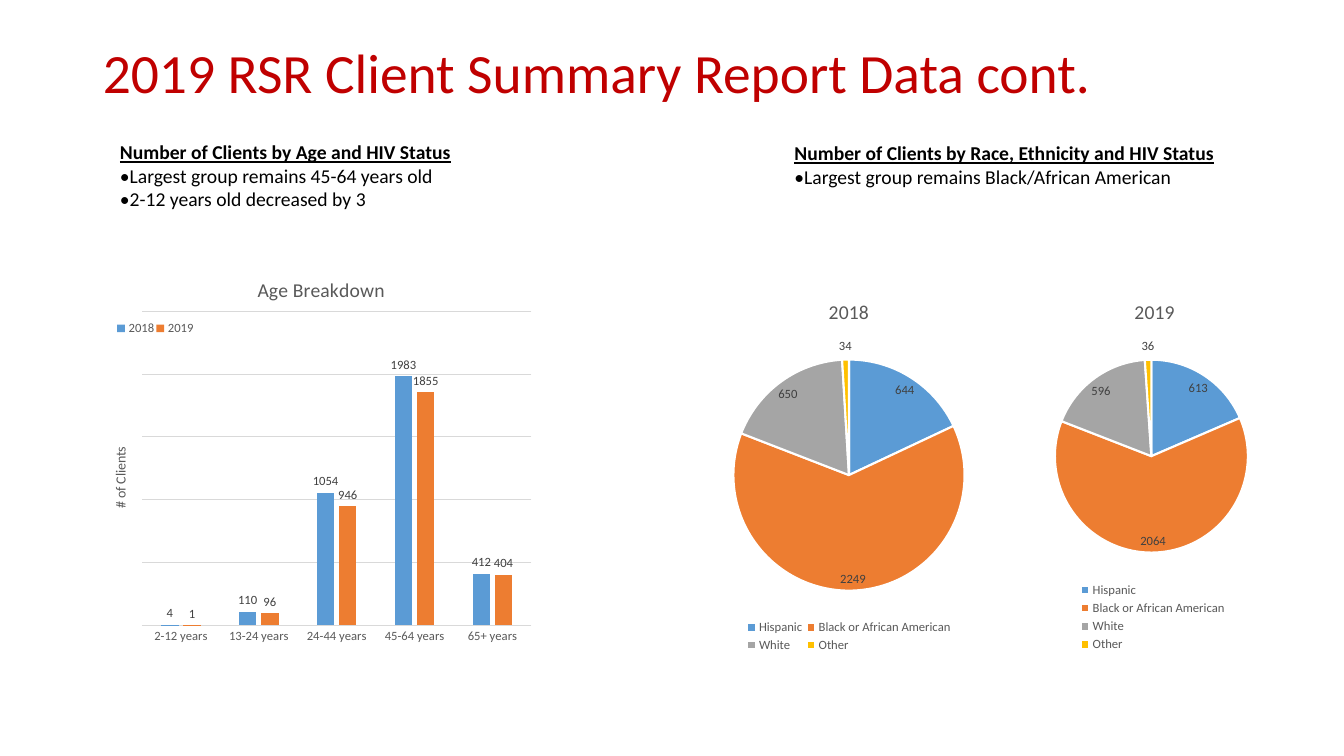
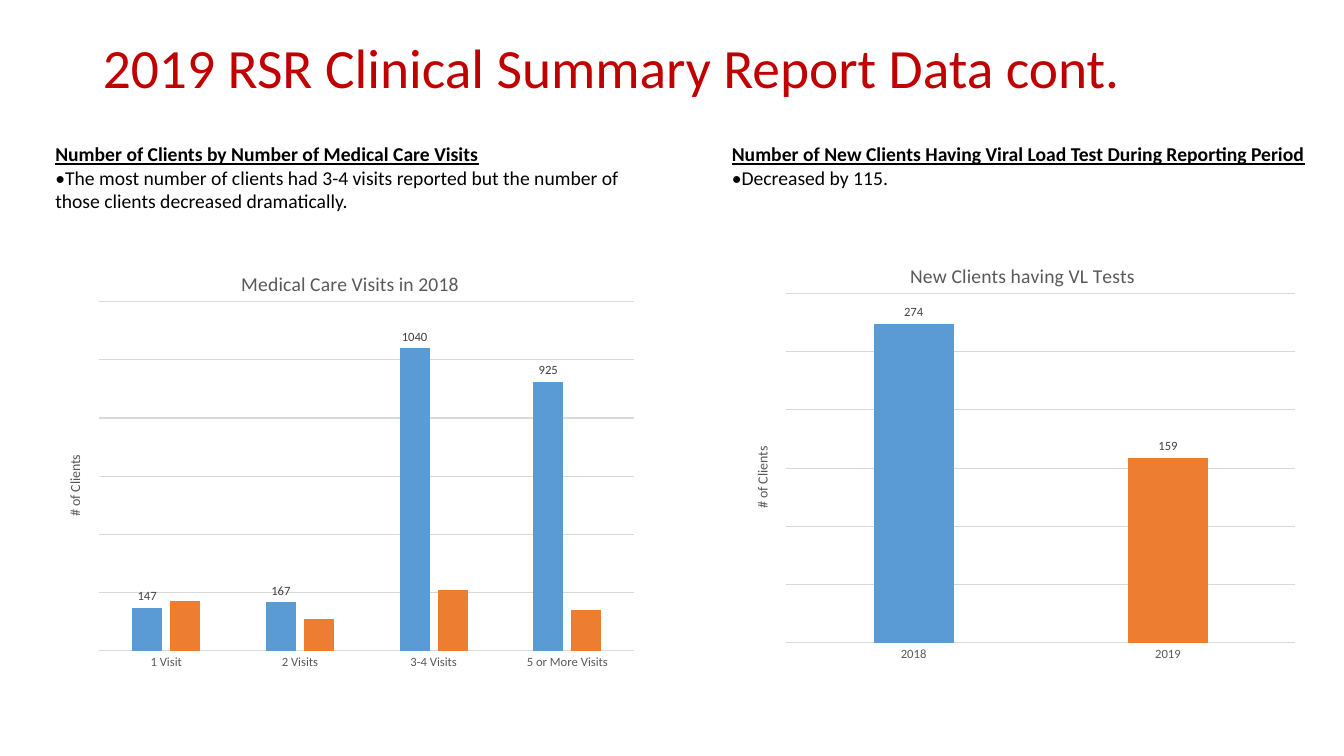
from lxml import etree
from pptx import Presentation
from pptx import util as u
from pptx.chart.data import CategoryChartData
from pptx.dml.color import RGBColor
from pptx.enum import chart as ch, text
from pptx.oxml.ns import qn

RED, BLACK, GRAY, DARK, RULE, WHITE = "C00000", "000000", "595959", "404040", "D9D9D9", "FFFFFF"
PALETTE = ["5B9BD5", "ED7D31", "A5A5A5", "FFC000"]
FONT = "Calibri"
COLUMN, PIE = ch.XL_CHART_TYPE.COLUMN_CLUSTERED, ch.XL_CHART_TYPE.PIE
RACES = ["Hispanic", "Black or African American", "White", "Other"]


def paint(target, color, **values):
    """Colour a font, line or chart format and set its other attributes."""
    target.fill.solid()
    target.fill.fore_color.rgb = RGBColor.from_string(color)
    for name, value in values.items():
        setattr(target, name, value)


def place(parent, box):
    """Fix a chart part at x, y (and width, height) as fractions of the chart."""
    for old in parent.findall(qn("c:layout")):
        parent.remove(old)
    layout = etree.Element(qn("c:layout"))
    manual = etree.SubElement(layout, qn("c:manualLayout"))
    if parent.tag == qn("c:plotArea"):
        etree.SubElement(manual, qn("c:layoutTarget")).set("val", "inner")
    for name in ("xMode", "yMode"):
        etree.SubElement(manual, qn("c:" + name)).set("val", "edge")
    for name, value in zip("xywh", box):
        etree.SubElement(manual, qn("c:" + name)).set("val", str(value))
    overlay = parent.find(qn("c:overlay"))
    if overlay is None:
        parent.insert(0, layout)
    else:
        overlay.addprevious(layout)


# Slide content: text boxes and charts with their fractional layouts
slides = [
    {
        "title": "2019 RSR Client Summary Report Data cont.", "title_height": 0.7,
        "notes": [
            {"at": (1.09, 1.34, 4.61, 0.81), "wrap": True, "lines": [
                "Number of Clients by Age and HIV Status",
                "•Largest group remains 45-64 years old",
                "•2-12 years old decreased by 3"]},
            {"at": (7.78, 1.35, 4.39, 0.57), "wrap": False, "lines": [
                "Number of Clients by Race, Ethnicity and HIV Status",
                "•Largest group remains Black/African American"]},
        ],
        "charts": [
            {"at": (0.92, 2.49, 4.44, 4.27), "kind": COLUMN, "title": "Age Breakdown",
             "categories": ["2-12 years", "13-24 years", "24-44 years", "45-64 years", "65+ years"],
             "series": {"2018": [4, 110, 1054, 1983, 412], "2019": [1, 96, 946, 1855, 404]},
             "scale": (2500, 500), "title_at": (0.36, 0.05),
             "plot_at": (0.11, 0.14, 0.87, 0.73), "legend_at": (0.05, 0.16, 0.18, 0.04)},
            {"at": (9.97, 2.74, 2.9, 3.76), "kind": PIE, "title": "2019",
             "categories": RACES, "series": {"2019": [613, 2064, 596, 36]},
             "title_at": (0.43, 0.05), "plot_at": (0.17, 0.22, 0.66, 0.51),
             "legend_at": (0.25, 0.8, 0.51, 0.2)},
            {"at": (6.83, 2.74, 3.15, 3.76), "kind": PIE, "title": "2018",
             "categories": RACES, "series": {"Series 1": [644, 2249, 650, 34]},
             "title_at": (0.43, 0.05), "plot_at": (0.14, 0.22, 0.73, 0.61),
             "legend_at": (0.17, 0.9, 0.67, 0.1)},
        ],
    },
    {
        "title": "2019 RSR Clinical Summary Report Data cont.", "title_height": 0.59,
        "notes": [
            {"at": (0.45, 1.36, 6.14, 0.81), "wrap": True, "lines": [
                "Number of Clients by Number of Medical Care Visits",
                "•The most number of clients had 3-4 visits reported but the number of "
                "those clients decreased dramatically."]},
            {"at": (7.16, 1.36, 5.92, 0.57), "wrap": False, "lines": [
                "Number of New Clients Having Viral Load Test During Reporting Period",
                "•Decreased by 115."]},
        ],
        "charts": [
            {"at": (0.45, 2.43, 5.96, 4.33), "kind": COLUMN, "title": "Medical Care Visits in 2018",
             "categories": ["1 Visit", "2 Visits", "3-4 Visits", "5 or More Visits"],
             "series": {"Series 1": [147, 167, 1040, 925], "Series 2": [170, 110, 210, 140]},
             "unlabelled": ["Series 2"], "scale": (1200, 200),
             "title_at": (0.32, 0.05), "plot_at": (0.09, 0.13, 0.89, 0.8)},
            {"at": (7.29, 2.35, 5.67, 4.33), "kind": COLUMN, "title": "New Clients having VL Tests",
             "categories": ["2018", "2019"], "series": {"Series 1": [274, 159]},
             "scale": (300, 50), "title_at": (0.3, 0.05),
             "plot_at": (0.09, 0.13, 0.89, 0.8)},
        ],
    },
]

presentation = Presentation()
presentation.slide_width, presentation.slide_height = u.Inches(13.33), u.Inches(7.5)

for content in slides:
    slide = presentation.slides.add_slide(presentation.slide_layouts[5])

    # Title
    title = slide.shapes.title
    title.left, title.top = u.Inches(0.92), u.Inches(0.4)
    title.width, title.height = u.Inches(11.5), u.Inches(content["title_height"])
    title.text_frame.text = content["title"]
    title.text_frame.auto_size = text.MSO_AUTO_SIZE.NONE
    title.text_frame.vertical_anchor = text.MSO_ANCHOR.MIDDLE
    paragraph = title.text_frame.paragraphs[0]
    paragraph.alignment, paragraph.line_spacing = text.PP_ALIGN.LEFT, 0.9
    paint(paragraph.runs[0].font, RED, size=u.Pt(39.6), name=FONT)

    # Underlined headings with their findings
    for note in content["notes"]:
        shape = slide.shapes.add_textbox(*map(u.Inches, note["at"]))
        frame = shape.text_frame
        frame.text = "\n".join(note["lines"])
        frame.word_wrap = note["wrap"]
        frame.auto_size = text.MSO_AUTO_SIZE.SHAPE_TO_FIT_TEXT
        for index, paragraph in enumerate(frame.paragraphs):
            heading = index == 0
            paint(paragraph.runs[0].font, BLACK, size=u.Pt(14), name=FONT,
                  bold=heading, underline=heading)

    # Charts
    for item in content["charts"]:
        data = CategoryChartData()
        data.categories = item["categories"]
        for name, values in item["series"].items():
            data.add_series(name, values)
        chart = slide.shapes.add_chart(item["kind"], *map(u.Inches, item["at"]), data).chart
        is_pie = item["kind"] == PIE
        paint(chart.font, BLACK, size=u.Pt(10), name=FONT)

        chart.has_title = True
        chart.chart_title.text_frame.text = item["title"]
        paint(chart.chart_title.text_frame.paragraphs[0].runs[0].font, GRAY,
              size=u.Pt(14), name=FONT, bold=False)
        place(chart.element.find(".//" + qn("c:title")), item["title_at"])
        place(chart.element.find(".//" + qn("c:plotArea")), item["plot_at"])

        chart.has_legend = "legend_at" in item
        if chart.has_legend:
            chart.legend.position = ch.XL_LEGEND_POSITION.BOTTOM
            chart.legend.include_in_layout = False
            paint(chart.legend.font, GRAY, size=u.Pt(9), name=FONT)
            place(chart.element.find(".//" + qn("c:legend")), item["legend_at"])

        # Series colours and value labels
        plot = chart.plots[0]
        plot.vary_by_categories = is_pie
        for series, color in zip(plot.series, PALETTE):
            paint(series.format, color)
            if len(plot.series) == 1:
                for index, point_color in enumerate(PALETTE[:len(item["categories"])]):
                    point = series.points[index]
                    paint(point.format, point_color)
                    if is_pie:
                        paint(point.format.line, WHITE, width=u.Pt(1.5))
            if series.name not in item.get("unlabelled", []):
                labels = series.data_labels
                labels.show_value = True
                labels.position = (ch.XL_LABEL_POSITION.BEST_FIT if is_pie
                                   else ch.XL_LABEL_POSITION.OUTSIDE_END)
                paint(labels.font, DARK, size=u.Pt(9), name=FONT)
        if is_pie:
            continue

        # Column spacing and axes
        plot.gap_width, plot.overlap = 219, -27
        category_axis, value_axis = chart.category_axis, chart.value_axis
        category_axis.major_tick_mark = ch.XL_TICK_MARK.NONE
        paint(category_axis.tick_labels.font, GRAY, size=u.Pt(9), name=FONT)
        paint(category_axis.format.line, RULE, width=u.Pt(0.75))
        value_axis.minimum_scale = 0
        value_axis.maximum_scale, value_axis.major_unit = item["scale"]
        value_axis.major_tick_mark = ch.XL_TICK_MARK.NONE
        value_axis.tick_label_position = ch.XL_TICK_LABEL_POSITION.NONE
        value_axis.format.line.fill.background()
        paint(value_axis.major_gridlines.format.line, RULE, width=u.Pt(0.75))
        frame = value_axis.axis_title.text_frame
        frame.text = "# of Clients"
        paint(frame.paragraphs[0].runs[0].font, GRAY, size=u.Pt(10), name=FONT, bold=False)
        body = chart.element.xpath(".//c:valAx/c:title//a:bodyPr")[0]
        body.set("rot", "-5400000")
        body.set("vert", "horz")

presentation.save("out.pptx")
